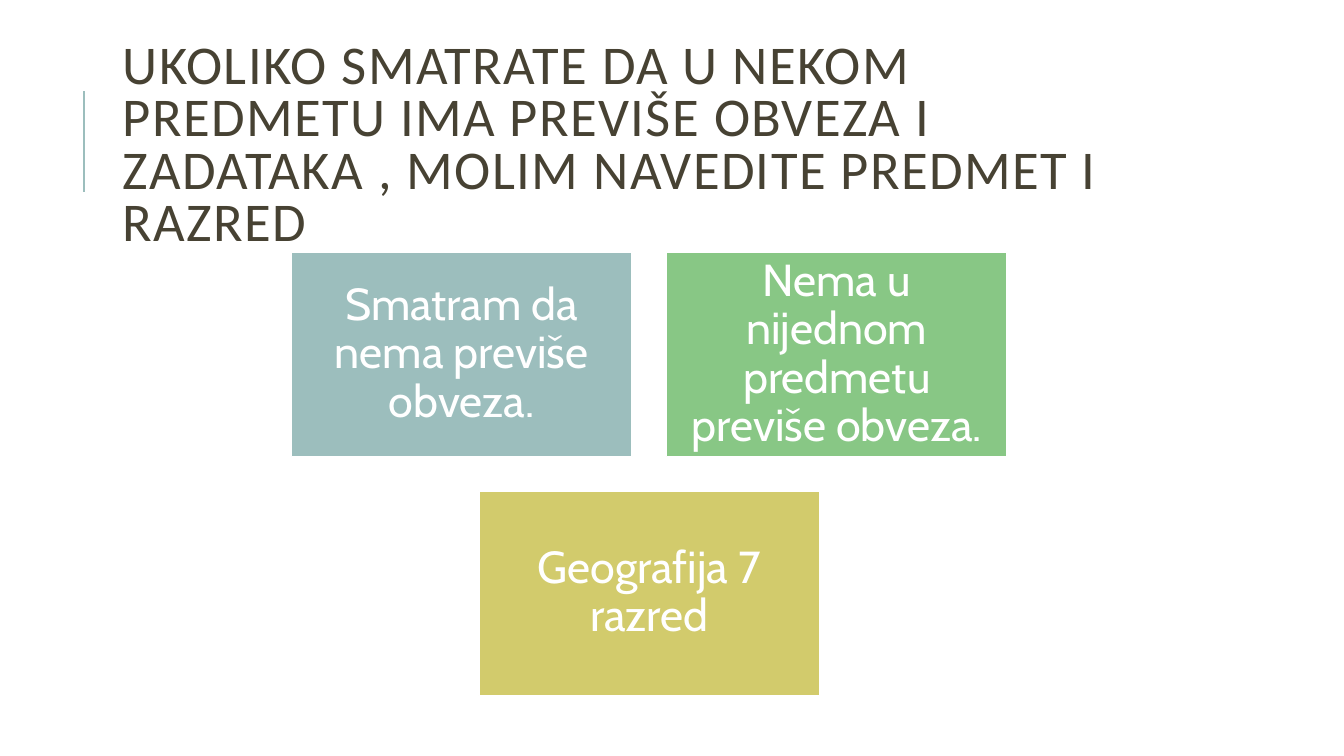
from pptx import Presentation
from pptx.dml.color import RGBColor
from pptx.enum import shapes, text
from pptx.oxml import parse_xml
from pptx.oxml.ns import nsdecls
from pptx.util import Inches, Pt

WHITE = RGBColor(0xFF, 0xFF, 0xFF)
BROWN = RGBColor(0x47, 0x42, 0x33)
TEAL = RGBColor(0x9C, 0xBE, 0xBD)
GREEN = RGBColor(0x88, 0xC7, 0x85)
YELLOW = RGBColor(0xD2, 0xCB, 0x6C)

CARD_WIDTH, CARD_HEIGHT, GAP = 3.38, 2.03, 0.34
CARDS_CENTER, CARDS_TOP = 6.44, 2.5
TITLE = ("UKOLIKO SMATRATE DA U NEKOM PREDMETU IMA PREVIŠE OBVEZA I "
         "ZADATAKA , MOLIM NAVEDITE PREDMET I RAZRED")
CARD_ROWS = [
    [("Smatram da nema previše obveza.", TEAL),
     ("Nema u nijednom predmetu previše obveza.", GREEN)],
    [("Geografija 7 razred", YELLOW)],
]


def write(frame, words, font, size, color, line_spacing, align):
    """Fill a text frame with one middle-anchored paragraph."""
    frame.word_wrap = True
    frame.vertical_anchor = text.MSO_ANCHOR.MIDDLE
    para = frame.paragraphs[0]
    para.alignment = align
    para.line_spacing = line_spacing
    span = para.add_run()
    span.text = words
    span.font.name = font
    span.font.size = Pt(size)
    span.font.color.rgb = color
    return span


def add_title(page):
    """Add the letter-spaced heading."""
    box = page.shapes.add_textbox(Inches(1.12), Inches(0.64), Inches(10.63), Inches(1.64))
    span = write(box.text_frame, TITLE, "Calibri", 39, BROWN, 0.8, text.PP_ALIGN.LEFT)
    span.font._element.set("spc", "100")


def add_accent_line(page):
    """Add the thin vertical line beside the heading."""
    line = page.shapes.add_connector(
        shapes.MSO_CONNECTOR.STRAIGHT, Inches(0.83), Inches(1.9), Inches(0.83), Inches(0.9))
    line.line.color.rgb = TEAL
    line.line.width = Pt(1.5)
    line._element.spPr.append(parse_xml(f"<a:effectLst {nsdecls('a')}/>"))


def add_card(page, left, top, words, color):
    """Add one coloured answer card."""
    card = page.shapes.add_shape(
        shapes.MSO_SHAPE.RECTANGLE, Inches(left), Inches(top),
        Inches(CARD_WIDTH), Inches(CARD_HEIGHT))
    card.shadow.inherit = False
    card.fill.solid()
    card.fill.fore_color.rgb = color
    card.line.color.rgb = WHITE
    card.line.width = Pt(1.25)
    frame = card.text_frame
    frame.margin_left = frame.margin_right = Inches(0.13)
    frame.margin_top = frame.margin_bottom = Inches(0.13)
    write(frame, words, "Cabin", 32, WHITE, 0.9, text.PP_ALIGN.CENTER)


def add_card_rows(page):
    """Lay out the answer cards in centred rows."""
    for row, cards in enumerate(CARD_ROWS):
        row_width = len(cards) * (CARD_WIDTH + GAP) - GAP
        top = CARDS_TOP + row * (CARD_HEIGHT + GAP)
        for column, (words, color) in enumerate(cards):
            left = CARDS_CENTER - row_width / 2 + column * (CARD_WIDTH + GAP)
            add_card(page, left, top, words, color)


def main():
    """Build and save the slide."""
    deck = Presentation()
    deck.slide_width, deck.slide_height = Inches(13.33), Inches(7.5)
    page = deck.slides.add_slide(deck.slide_layouts[6])
    add_accent_line(page)
    add_title(page)
    add_card_rows(page)
    deck.save("out.pptx")


if __name__ == "__main__":
    main()
